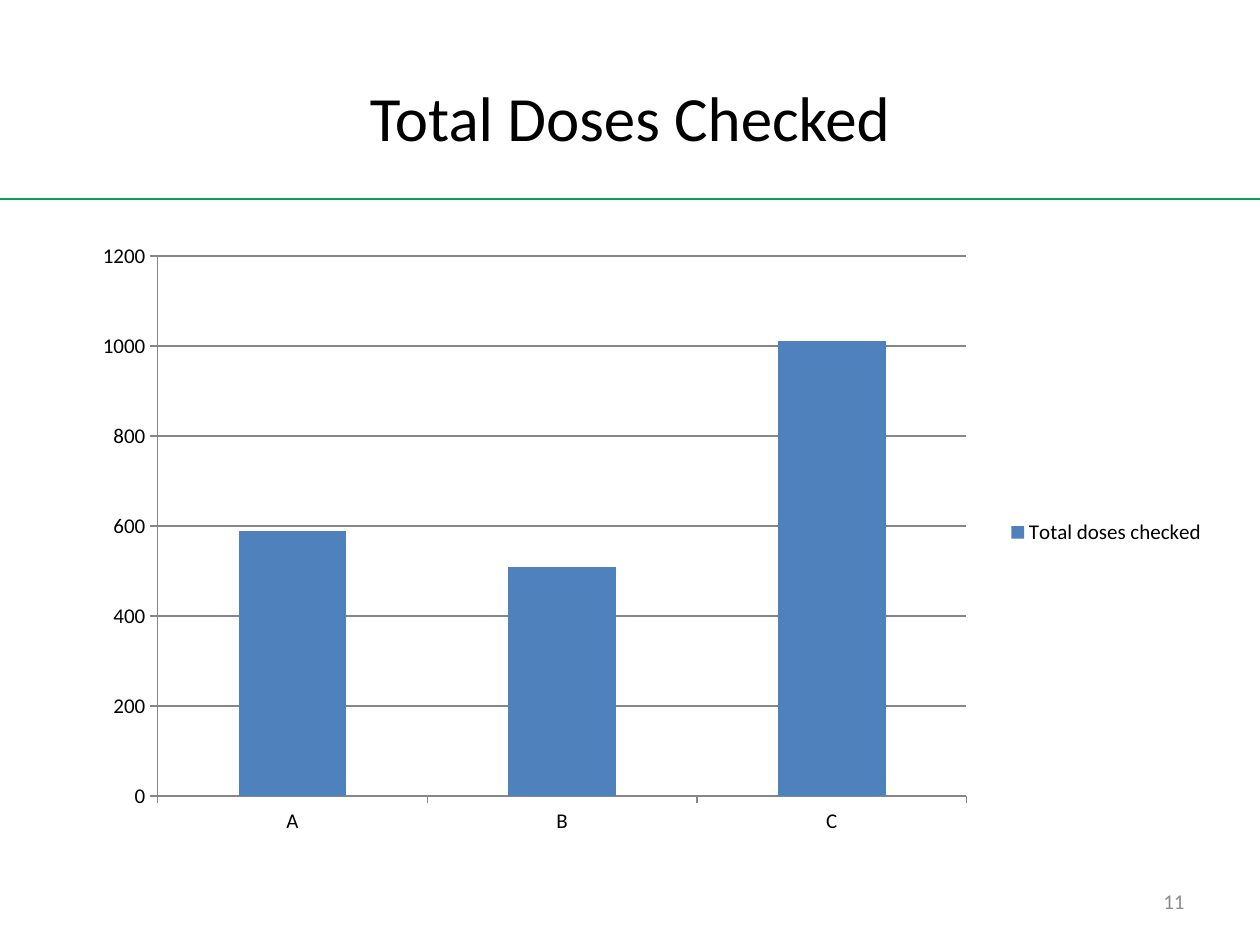
from lxml import etree
from pptx import Presentation, util as u
from pptx.chart.data import CategoryChartData
from pptx.dml.color import RGBColor
from pptx.enum import chart as ch, shapes, text
from pptx.oxml import parse_xml
from pptx.oxml.ns import nsdecls, qn

BLACK = RGBColor(0x00, 0x00, 0x00)
GREEN = RGBColor(0x03, 0x9F, 0x55)
BLUE = RGBColor(0x4F, 0x81, 0xBD)
GRID_GREY = RGBColor(0x86, 0x86, 0x86)
NUMBER_GREY = RGBColor(0x8C, 0x8C, 0x8C)
FONT = "Calibri"
WIDTH, HEIGHT = u.Inches(10), u.Inches(7.5)
MARGIN = 0.05 * WIDTH
RULE_Y = u.Inches(1.58)
PLOT = {"x": 0.082, "y": 0.057, "w": 0.7, "h": 0.866}


def style_font(font, size, color):
    font.name = FONT
    font.size = u.Pt(size)
    font.color.rgb = color


def place(box, left, top, width, height):
    box.left, box.top, box.width, box.height = map(int, (left, top, width, height))


def write(box, words, size, color, align):
    frame = box.text_frame
    frame.word_wrap = True
    frame.vertical_anchor = text.MSO_ANCHOR.MIDDLE
    paragraph = frame.paragraphs[0]
    paragraph.alignment = align
    run = paragraph.add_run()
    run.text = words
    style_font(run.font, size, color)


def add_title(slide, words):
    title = slide.shapes.title
    place(title, MARGIN, 0.04 * HEIGHT, WIDTH - 2 * MARGIN, HEIGHT / 6)
    write(title, words, 36, BLACK, text.PP_ALIGN.CENTER)


def add_rule(slide):
    rule = slide.shapes.add_connector(
        shapes.MSO_CONNECTOR.STRAIGHT, 0, RULE_Y, WIDTH, RULE_Y)
    rule.line.color.rgb = GREEN
    rule.line.width = u.Pt(1)
    etree.SubElement(rule._element.spPr, qn("a:effectLst"))


def add_page_number(slide, number):
    width, height = u.Inches(2.33), u.Inches(0.4)
    box = slide.shapes.add_textbox(
        int(WIDTH - MARGIN - width), u.Inches(6.95), width, height)
    write(box, number, 12, NUMBER_GREY, text.PP_ALIGN.RIGHT)


def set_plot_layout(chart):
    modes = "".join(f'<c:{side}Mode val="edge"/>' for side in "xy")
    shares = "".join(f'<c:{side} val="{share}"/>' for side, share in PLOT.items())
    layout = parse_xml(
        f'<c:layout {nsdecls("c")}><c:manualLayout><c:layoutTarget val="inner"/>'
        f'{modes}{shares}</c:manualLayout></c:layout>')
    plot_area = chart._chartSpace.chart.plotArea
    for automatic in plot_area.findall(qn("c:layout")):
        plot_area.remove(automatic)
    plot_area.insert(0, layout)


def style_axis(axis):
    axis.major_tick_mark = ch.XL_TICK_MARK.OUTSIDE
    axis.minor_tick_mark = ch.XL_TICK_MARK.NONE
    axis.format.line.color.rgb = GRID_GREY
    style_font(axis.tick_labels.font, 12, BLACK)


def add_dose_chart(slide):
    doses = CategoryChartData()
    doses.categories = ["A", "B", "C"]
    doses.add_series("Total doses checked", [590, 510, 1010])
    chart = slide.shapes.add_chart(
        ch.XL_CHART_TYPE.COLUMN_CLUSTERED, int(MARGIN), u.Inches(1.75),
        u.Inches(9.17), u.Inches(4.95), doses).chart
    style_font(chart.font, 10, BLACK)
    chart.has_title = False
    chart.has_legend = True
    chart.legend.position = ch.XL_LEGEND_POSITION.RIGHT
    chart.legend.include_in_layout = False
    style_font(chart.legend.font, 12, BLACK)
    for axis in (chart.category_axis, chart.value_axis):
        style_axis(axis)
    scale = chart.value_axis
    scale.minimum_scale, scale.maximum_scale, scale.major_unit = 0, 1200, 200
    scale.has_major_gridlines = True
    scale.major_gridlines.format.line.color.rgb = GRID_GREY
    columns = chart.plots[0]
    columns.gap_width = 150
    columns.vary_by_categories = False
    fill = columns.series[0].format.fill
    fill.solid()
    fill.fore_color.rgb = BLUE
    set_plot_layout(chart)


def main():
    deck = Presentation()
    deck.slide_width, deck.slide_height = WIDTH, HEIGHT
    slide = deck.slides.add_slide(deck.slide_layouts.get_by_name("Title Only"))
    add_title(slide, "Total Doses Checked")
    add_rule(slide)
    add_page_number(slide, "11")
    add_dose_chart(slide)
    deck.save("out.pptx")


if __name__ == "__main__":
    main()
